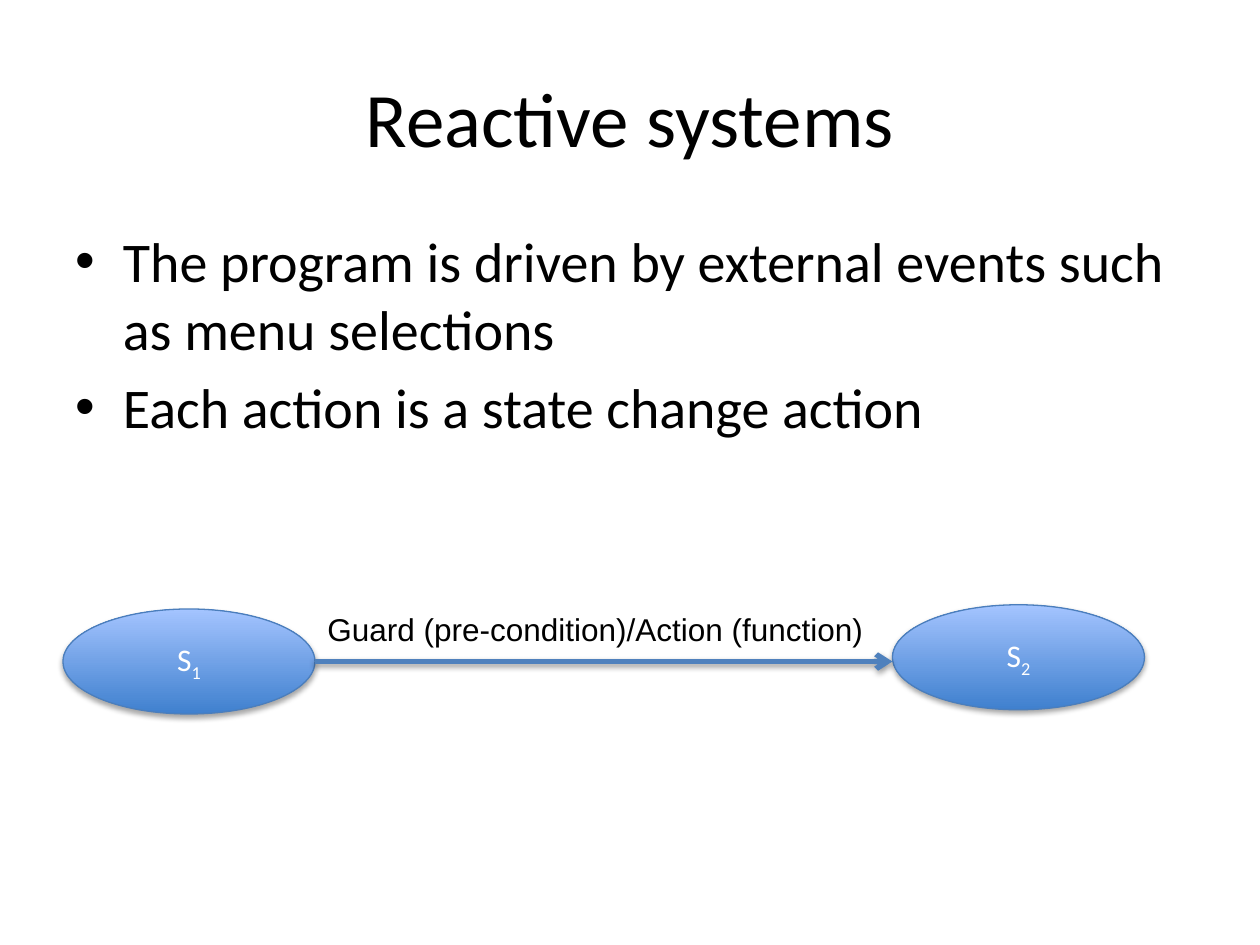
from lxml import etree
from pptx import Presentation
from pptx.dml.color import RGBColor
from pptx.enum.shapes import MSO_CONNECTOR, MSO_SHAPE
from pptx.enum.text import MSO_ANCHOR, MSO_AUTO_SIZE, PP_ALIGN
from pptx.oxml.ns import qn
from pptx.util import Pt

ELLIPSE = MSO_SHAPE.OVAL
STRAIGHT = MSO_CONNECTOR.STRAIGHT
CENTER = PP_ALIGN.CENTER
MIDDLE = MSO_ANCHOR.MIDDLE
FIT_SHAPE = MSO_AUTO_SIZE.SHAPE_TO_FIT_TEXT
BLACK, WHITE = "000000", "FFFFFF"


def color(hex_string):
    return RGBColor.from_string(hex_string)


def place(shape, left, top, width, height):
    shape.left, shape.top = Pt(left), Pt(top)
    shape.width, shape.height = Pt(width), Pt(height)


def set_font(paragraph, size, name="Calibri", hex_string=BLACK):
    paragraph.font.size = Pt(size)
    paragraph.font.name = name
    paragraph.font.color.rgb = color(hex_string)


def add_shadow(shape, distance, opacity):
    """Cast a soft black shadow straight down."""
    properties = shape.element.spPr
    effects = properties.find(qn("a:effectLst"))
    if effects is None:
        effects = etree.SubElement(properties, qn("a:effectLst"))
    shadow = etree.SubElement(
        effects, qn("a:outerShdw"), blurRad=str(Pt(3.1)), dist=str(Pt(distance)),
        dir="5400000", rotWithShape="0")
    black = etree.SubElement(shadow, qn("a:srgbClr"), val=BLACK)
    etree.SubElement(black, qn("a:alpha"), val=str(opacity * 1000))


def fill_title(slide, text, box):
    title = slide.shapes.title
    place(title, *box)
    title.text_frame.text = text
    title.text_frame.vertical_anchor = MIDDLE
    paragraph = title.text_frame.paragraphs[0]
    paragraph.alignment = CENTER
    set_font(paragraph, 44)


def fill_bullets(slide, items, box):
    # Bullets, indents and spacing come from the template's body style
    body = slide.placeholders[1]
    place(body, *box)
    body.text_frame.text = "\n".join(items)
    for paragraph in body.text_frame.paragraphs:
        set_font(paragraph, 32)


def add_state(slide, number, left, top, width, height):
    state = slide.shapes.add_shape(ELLIPSE, Pt(left), Pt(top), Pt(width), Pt(height))
    state.fill.gradient()
    state.fill.gradient_angle = 90
    for stop, hex_string in zip(state.fill.gradient_stops, ("3F80CE", "A4C4FF")):
        stop.color.rgb = color(hex_string)
        stop.position = 0 if hex_string == "3F80CE" else 1
    state.line.color.rgb = color("4B7EBC")
    state.line.width = Pt(0.75)
    state.shadow.inherit = False
    add_shadow(state, 1.8, 35)

    # Name with a subscript number
    state.text_frame.vertical_anchor = MIDDLE
    paragraph = state.text_frame.paragraphs[0]
    paragraph.alignment = CENTER
    set_font(paragraph, 18, hex_string=WHITE)
    paragraph.add_run().text = "S"
    subscript = paragraph.add_run()
    subscript.text = number
    subscript.font.element.set("baseline", "-25000") if hasattr(
        subscript.font, "element") else subscript._r.get_or_add_rPr().set("baseline", "-25000")


def add_transition(slide, label, left, top, width, height):
    # Arrow along the bottom of the box
    bottom = Pt(top + height)
    arrow = slide.shapes.add_connector(
        STRAIGHT, Pt(left), bottom, Pt(left + width), bottom)
    arrow.line.color.rgb = color("4F81BD")
    arrow.line.width = Pt(3)
    line = arrow.element.spPr.find(qn("a:ln"))
    etree.SubElement(line, qn("a:tailEnd"), type="arrow")
    add_shadow(arrow, 1.6, 38)

    # Label above the arrow
    text_box = slide.shapes.add_textbox(Pt(left), Pt(top), Pt(323.3), Pt(28.8))
    text_box.text_frame.word_wrap = False
    text_box.text_frame.auto_size = FIT_SHAPE
    text_box.text_frame.text = label
    set_font(text_box.text_frame.paragraphs[0], 18, "Arial")


def add_state_diagram(slide, left, top, width, height):
    state_width = 144
    right_state = left + width - state_width
    add_state(slide, "1", left, top + 2.4, state_width, height)
    add_state(slide, "2", right_state, top, state_width, height)
    add_transition(slide, "Guard (pre-condition)/Action (function)",
                   left + state_width, top - 0.6, right_state - left - state_width, 33)


def main():
    presentation = Presentation()
    presentation.slide_width, presentation.slide_height = Pt(720), Pt(540)
    slide = presentation.slides.add_slide(presentation.slide_layouts[1])
    fill_title(slide, "Reactive systems", (36, 21.6, 648, 90))
    fill_bullets(slide, [
        "The program is driven by external events such as menu selections",
        "Each action is a state change action",
    ], (36, 126, 648, 162))
    add_state_diagram(slide, 36, 345.6, 618, 60)
    presentation.save("out.pptx")


if __name__ == "__main__":
    main()
